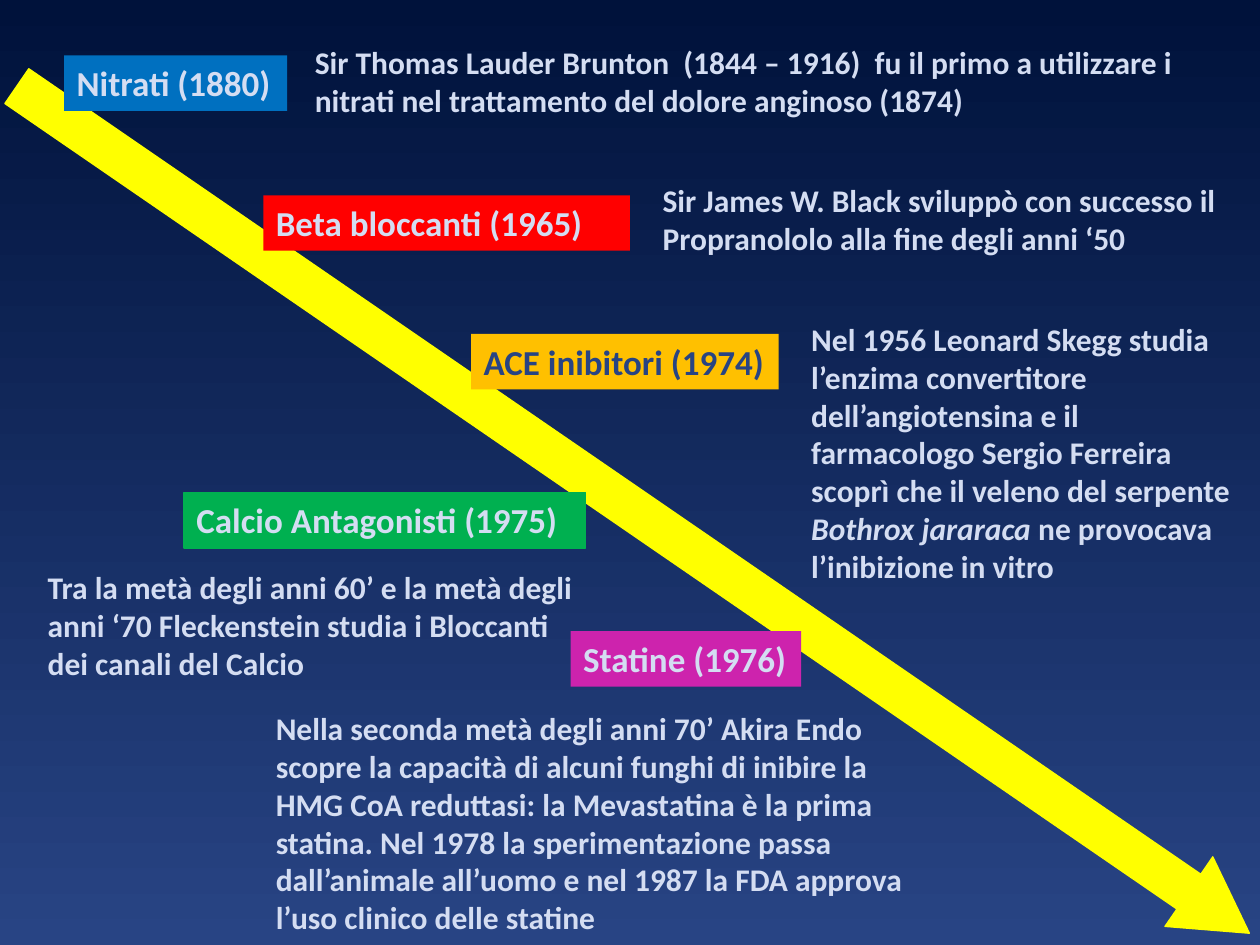
from dataclasses import dataclass

from pptx import Presentation
from pptx.dml.color import RGBColor
from pptx.enum.shapes import MSO_SHAPE
from pptx.enum.text import MSO_ANCHOR, MSO_AUTO_SIZE, PP_ALIGN
from pptx.util import Inches, Pt

RECTANGLE = MSO_SHAPE.RECTANGLE
DOWN_ARROW = MSO_SHAPE.DOWN_ARROW
FIT_SHAPE = MSO_AUTO_SIZE.SHAPE_TO_FIT_TEXT
TOP = MSO_ANCHOR.TOP
LEFT = PP_ALIGN.LEFT

COLORS = {
    "night": "00123B",
    "navy": "284484",
    "pale": "D4DDF2",
    "dark_text": "284483",
    "yellow": "FFFF00",
    "blue": "0070C0",
    "red": "FF0000",
    "amber": "FFC000",
    "green": "00B050",
    "magenta": "CD23AD",
}
LABEL_HEIGHT = 0.44
LABEL_SIZE = 20
NOTE_SIZE = 18


@dataclass
class Label:
    """Coloured box naming a drug class and its year."""
    text: str
    left: float
    top: float
    width: float
    fill: str
    color: str = "pale"
    wrap: bool = True
    outlined: bool = False


@dataclass
class Note:
    """Story behind a drug class; every second run is italic."""
    runs: tuple[str, ...]
    left: float
    top: float
    width: float
    height: float


LABELS = [
    Label("Nitrati (1880)", 0.51, 0.44, 1.77, "blue", wrap=False),
    Label("Beta bloccanti (1965)", 2.09, 1.55, 2.91, "red"),
    Label("ACE inibitori (1974)", 3.74, 2.65, 2.44, "amber", "dark_text", wrap=False),
    Label("Calcio Antagonisti (1975)", 1.46, 3.91, 3.19, "green", outlined=True),
    Label("Statine (1976)", 4.53, 5.01, 1.83, "magenta", wrap=False),
]

NOTES = [
    Note(("Sir Thomas Lauder Brunton  (1844 – 1916)  fu il primo a utilizzare i "
          "nitrati nel trattamento del dolore anginoso (1874)",),
         2.4, 0.29, 7.36, 0.71),
    Note(("Sir James W. Black sviluppò con successo il Propranololo alla fine "
          "degli anni ‘50",),
         5.16, 1.39, 4.61, 0.71),
    Note(("Nel 1956 Leonard Skegg studia l’enzima convertitore dell’angiotensina "
          "e il farmacologo Sergio Ferreira scoprì che il veleno del serpente ",
          "Bothrox jararaca ",
          "ne provocava l’inibizione in vitro"),
         6.34, 2.49, 3.66, 2.22),
    Note(("Tra la metà degli anni 60’ e la metà degli anni ‘70 Fleckenstein "
          "studia i Bloccanti dei canali del Calcio",),
         0.28, 4.46, 4.45, 1.01),
    Note(("Nella seconda metà degli anni 70’ Akira Endo scopre la capacità di "
          "alcuni funghi di inibire la HMG CoA reduttasi: la Mevastatina è la "
          "prima statina. Nel 1978 la sperimentazione passa dall’animale "
          "all’uomo e nel 1987 la FDA approva l’uso clinico delle statine",),
         2.09, 5.58, 5.28, 1.92),
]


def rgb(name: str) -> RGBColor:
    return RGBColor.from_string(COLORS[name])


def paint_background(slide) -> None:
    fill = slide.background.fill
    fill.gradient()
    fill.gradient_angle = 90
    for stop, name in zip(fill.gradient_stops, ("navy", "night")):
        stop.color.rgb = rgb(name)


def add_filled_shape(slide, kind, box: tuple[float, ...], color: str, outlined: bool):
    shape = slide.shapes.add_shape(kind, *map(Inches, box))
    shape.shadow.inherit = False
    shape.fill.solid()
    shape.fill.fore_color.rgb = rgb(color)
    if outlined:
        shape.line.color.rgb = rgb(color)
        shape.line.width = Pt(0.75)
    else:
        shape.line.fill.background()
    return shape


def write_text(shape, runs: tuple[str, ...], size: int, color: str, wrap: bool = True) -> None:
    frame = shape.text_frame
    frame_format = {"word_wrap": wrap, "auto_size": FIT_SHAPE, "vertical_anchor": TOP}
    for name, value in frame_format.items():
        setattr(frame, name, value)
    paragraph = frame.paragraphs[0]
    paragraph.alignment = LEFT
    for index, text in enumerate(runs):
        run = paragraph.add_run()
        run.text = text
        font_format = {"name": "Calibri", "size": Pt(size), "bold": True,
                       "italic": index % 2 == 1}
        for name, value in font_format.items():
            setattr(run.font, name, value)
        run.font.color.rgb = rgb(color)


def add_timeline_arrow(slide) -> None:
    arrow = add_filled_shape(slide, DOWN_ARROW, (4.69, -1.89, 0.67, 11.87), "yellow", True)
    arrow.rotation = 304.5
    arrow.adjustments[0] = 0.5
    arrow.adjustments[1] = 0.87


def add_label(slide, label: Label) -> None:
    box = (label.left, label.top, label.width, LABEL_HEIGHT)
    shape = add_filled_shape(slide, RECTANGLE, box, label.fill, label.outlined)
    write_text(shape, (label.text,), LABEL_SIZE, label.color, label.wrap)


def add_note(slide, note: Note) -> None:
    box = (note.left, note.top, note.width, note.height)
    shape = slide.shapes.add_textbox(*map(Inches, box))
    write_text(shape, note.runs, NOTE_SIZE, "pale")


def main() -> None:
    presentation = Presentation()
    presentation.slide_width = Inches(10)
    presentation.slide_height = Inches(7.5)
    slide = presentation.slides.add_slide(presentation.slide_layouts[6])

    # Background and diagonal timeline
    paint_background(slide)
    add_timeline_arrow(slide)

    # Notes, then drug classes on top
    for note in NOTES:
        add_note(slide, note)
    for label in LABELS:
        add_label(slide, label)

    presentation.save("out.pptx")


if __name__ == "__main__":
    main()
